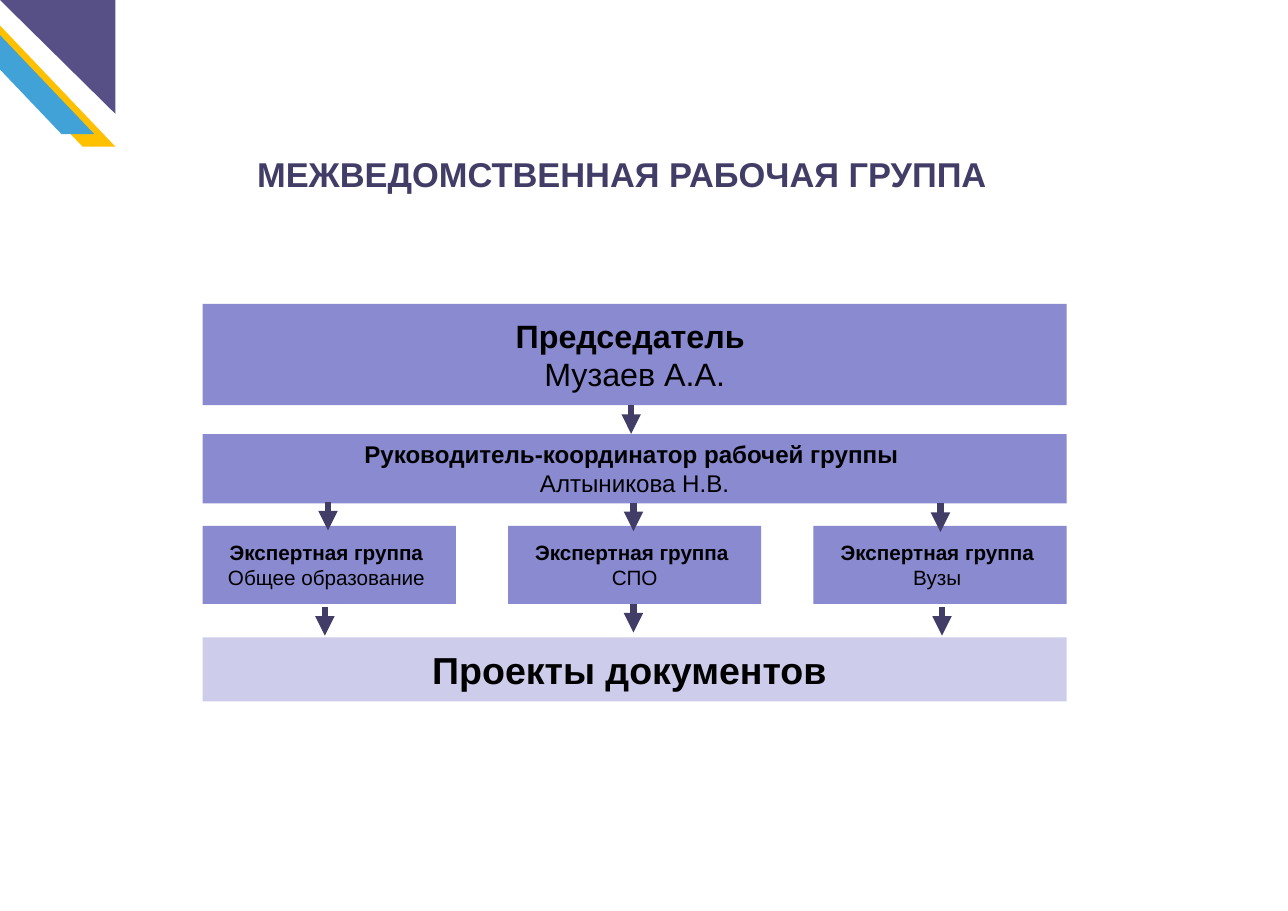
from lxml.etree import SubElement
from pptx import Presentation
from pptx.dml.color import RGBColor
from pptx.enum.shapes import MSO_CONNECTOR, MSO_SHAPE
from pptx.enum.text import MSO_ANCHOR, MSO_AUTO_SIZE, PP_ALIGN
from pptx.oxml.ns import qn
from pptx.util import Pt

COLORS = {
    "dark": "423D67",
    "violet": "565087",
    "blue": "41A2D8",
    "yellow": "FFC000",
    "box": "8A8AD0",
    "result": "CDCDEB",
    "text": "000000",
}

presentation = Presentation()
presentation.slide_width = Pt(1190.16)
presentation.slide_height = Pt(841.68)
slide = presentation.slides.add_slide(presentation.slide_layouts[5])


def add_filled_shape(preset, left, top, width, height, color):
    shape = slide.shapes.add_shape(preset, Pt(left), Pt(top), Pt(width), Pt(height))
    shape.shadow.inherit = False
    shape.fill.solid()
    shape.fill.fore_color.rgb = RGBColor.from_string(COLORS[color])
    shape.line.fill.background()
    return shape


def add_run(paragraph, text, size, color, bold):
    run = paragraph.add_run()
    run.text = text
    run.font.name = "Arial"
    run.font.size = Pt(size)
    run.font.bold = bold
    run.font.color.rgb = RGBColor.from_string(COLORS[color])


for left, top, color in [(-56.88, -4.32, "yellow"), (-76.32, -15.84, "blue")]:
    stripe = add_filled_shape(MSO_SHAPE.PARALLELOGRAM, left, top, 163.44, 139.68, color)
    stripe.adjustments[0] = 0.953
    stripe.element.spPr.find(qn("a:xfrm")).set("flipH", "1")

corner = add_filled_shape(MSO_SHAPE.RIGHT_TRIANGLE, 0, 0, 106.56, 105.12, "violet")
corner.rotation = 180

title = slide.shapes.title
title.left, title.top, title.width, title.height = Pt(230.4), Pt(138.24), Pt(699.84), Pt(46.08)
title.text_frame.auto_size = MSO_AUTO_SIZE.NONE
title.text_frame.vertical_anchor = MSO_ANCHOR.TOP
title_paragraph = title.text_frame.paragraphs[0]
title_paragraph.alignment = PP_ALIGN.LEFT
add_run(title_paragraph, "МЕЖВЕДОМСТВЕННАЯ РАБОЧАЯ ГРУППА", 31.8, "dark", True)

chart_left, chart_width = 187.2, 798.48
group_width = 234
group_step = (chart_width - group_width) / 2

boxes = [
    (chart_left, 280.8, chart_width, 93.6, "box", 29.8, ["Председатель ", "Музаев А.А."]),
    (chart_left, 401.04, chart_width, 64.08, "box", 22.3,
     ["Руководитель-координатор рабочей группы ", "Алтыникова Н.В."]),
    (chart_left, 588.96, chart_width, 59.04, "result", 34.7, ["Проекты документов "]),
]
for index, group in enumerate(["Общее образование ", "СПО", "Вузы "]):
    boxes.append((chart_left + index * group_step, 486, group_width, 72, "box", 19.1,
                  ["Экспертная группа ", group]))

for left, top, width, height, color, size, lines in boxes:
    box = add_filled_shape(MSO_SHAPE.RECTANGLE, left, top, width, height, color)
    frame = box.text_frame
    frame.word_wrap = True
    frame.vertical_anchor = MSO_ANCHOR.MIDDLE
    for index, line in enumerate(lines):
        paragraph = frame.paragraphs[0] if index == 0 else frame.add_paragraph()
        paragraph.alignment = PP_ALIGN.CENTER
        add_run(paragraph, line, size, "text", index == 0)

arrow_length = 26.4
arrow_starts = [
    (583.2, 374.4),
    (303.12, 463.68), (585.36, 464.4), (869.04, 465.12),
    (300.24, 560.88), (585.36, 558), (870.48, 560.88),
]
for x, top in arrow_starts:
    arrow = slide.shapes.add_connector(
        MSO_CONNECTOR.STRAIGHT, Pt(x), Pt(top), Pt(x), Pt(top + arrow_length))
    arrow.line.width = Pt(6)
    arrow.line.color.rgb = RGBColor.from_string(COLORS["dark"])
    SubElement(arrow.line._get_or_add_ln(), qn("a:tailEnd"), type="triangle")
    SubElement(arrow.element.spPr, qn("a:effectLst"))

presentation.save("out.pptx")
